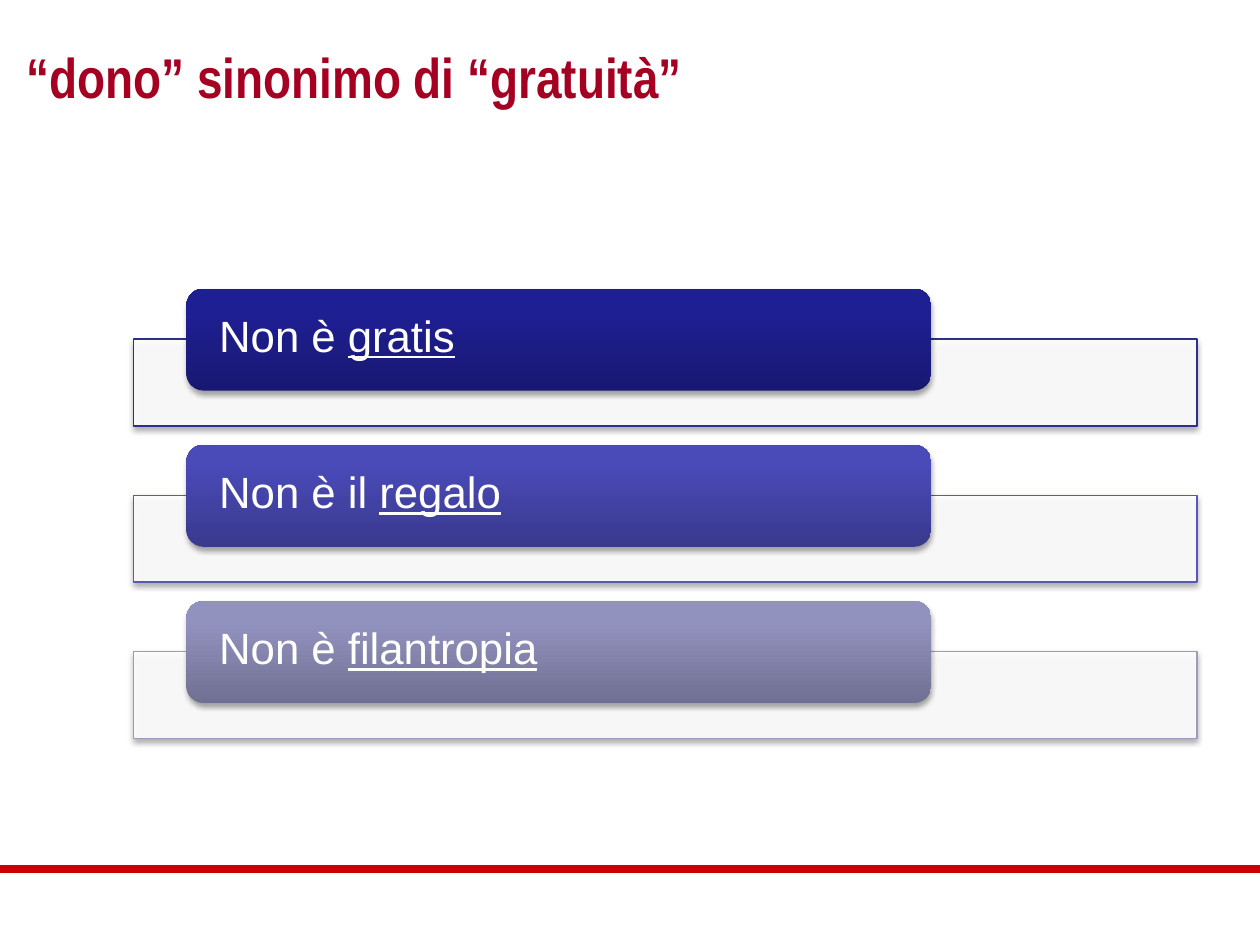
from dataclasses import dataclass

from lxml.etree import SubElement
from pptx import Presentation
from pptx.dml.color import RGBColor
from pptx.enum.shapes import MSO_CONNECTOR as Connector
from pptx.enum.shapes import MSO_SHAPE as Shape
from pptx.enum.text import MSO_ANCHOR as Anchor
from pptx.enum.text import PP_ALIGN as Align
from pptx.oxml import parse_xml
from pptx.oxml.ns import nsdecls, qn
from pptx.util import Inches, Pt

FIRST_TOP = 2.29
ROW_STEP = 1.24


@dataclass
class Row:
    lead: str
    keyword: str
    outline: str
    gradient: tuple[str, str, str]


ROWS = [
    Row("Non è ", "gratis", "2E2E8B", ("181872", "1F1F94", "1D1D97")),
    Row("Non è il ", "regalo", "5959B1", ("39398E", "4A4AB8", "4848BB")),
    Row("Non è ", "filantropia", "9C9CBF", ("707093", "9292BF", "9191C0")),
]


def paint(target, color: str) -> None:
    target.solid()
    target.fore_color.rgb = RGBColor.from_string(color)


def place(left: float, top: float, width: float, height: float) -> list:
    return [Inches(value) for value in (left, top, width, height)]


def add_span(para, text: str, font: str, size: int, color: str):
    span = para.add_run()
    span.text = text
    span.font.name = font
    span.font.size = Pt(size)
    paint(span.font.fill, color)
    return span


def add_shadow(shape) -> None:
    shape.shadow.inherit = False
    effects = shape._element.spPr.find(qn("a:effectLst"))
    effects.append(parse_xml(
        f'<a:outerShdw {nsdecls("a")} blurRad="{Pt(3.1)}" dist="{Pt(1.8)}" '
        'dir="5400000" rotWithShape="0"><a:srgbClr val="000000">'
        '<a:alpha val="35000"/></a:srgbClr></a:outerShdw>'))


def add_gradient(shape, colors: tuple[str, str, str]) -> None:
    stops = "".join(
        f'<a:gs pos="{position}"><a:srgbClr val="{color}"/></a:gs>'
        for position, color in zip((0, 80000, 100000), colors))
    shape._element.spPr.insert(2, parse_xml(
        f'<a:gradFill {nsdecls("a")} rotWithShape="1"><a:gsLst>{stops}</a:gsLst>'
        '<a:lin ang="16200000" scaled="0"/></a:gradFill>'))


def add_row(group, row: Row, top: float) -> None:
    panel = group.shapes.add_shape(Shape.RECTANGLE, *place(1.06, top + 0.4, 8.44, 0.69))
    paint(panel.fill, "FFFFFF")
    white = panel._element.spPr.find(qn("a:solidFill")).find(qn("a:srgbClr"))
    SubElement(white, qn("a:alpha"), val="90000")
    paint(panel.line.fill, row.outline)
    panel.line.width = Pt(0.75)
    add_shadow(panel)

    pill = group.shapes.add_shape(Shape.ROUNDED_RECTANGLE, *place(1.48, top, 5.91, 0.81))
    add_gradient(pill, row.gradient)
    pill.line.fill.background()
    add_shadow(pill)

    box = group.shapes.add_textbox(*place(1.52, top + 0.03, 5.83, 0.73))
    frame = box.text_frame
    frame.word_wrap = True
    frame.vertical_anchor = Anchor.MIDDLE
    frame.margin_left = frame.margin_right = Inches(0.22)
    frame.margin_top = frame.margin_bottom = 0
    para = frame.paragraphs[0]
    para.line_spacing = 0.9
    add_span(para, row.lead, "Arial", 25, "FFFFFF")
    add_span(para, row.keyword, "Arial", 25, "FFFFFF").font.underline = True


def add_rule(page) -> None:
    rule = page.shapes.add_connector(
        Connector.STRAIGHT, Inches(0), Inches(6.9), Inches(10), Inches(6.9))
    paint(rule.line.fill, "CC0000")
    rule.line.width = Pt(4.5)
    SubElement(rule._element.spPr, qn("a:effectLst"))


def add_title(page, text: str) -> None:
    title = page.shapes.title
    title.left, title.top, title.width, title.height = place(0.11, 0.13, 9.8, 0.95)
    title.text_frame.vertical_anchor = Anchor.MIDDLE
    para = title.text_frame.paragraphs[0]
    para.alignment = Align.LEFT
    add_span(para, text, "Arial Narrow", 32, "A50021").font.bold = True


def main() -> None:
    deck = Presentation()
    deck.slide_width, deck.slide_height = Inches(10), Inches(7.5)
    page = deck.slides.add_slide(deck.slide_layouts[5])
    add_rule(page)
    add_title(page, "“dono” sinonimo di “gratuità”")
    group = page.shapes.add_group_shape()
    for index, row in enumerate(ROWS):
        add_row(group, row, FIRST_TOP + index * ROW_STEP)
    deck.save("out.pptx")


if __name__ == "__main__":
    main()
